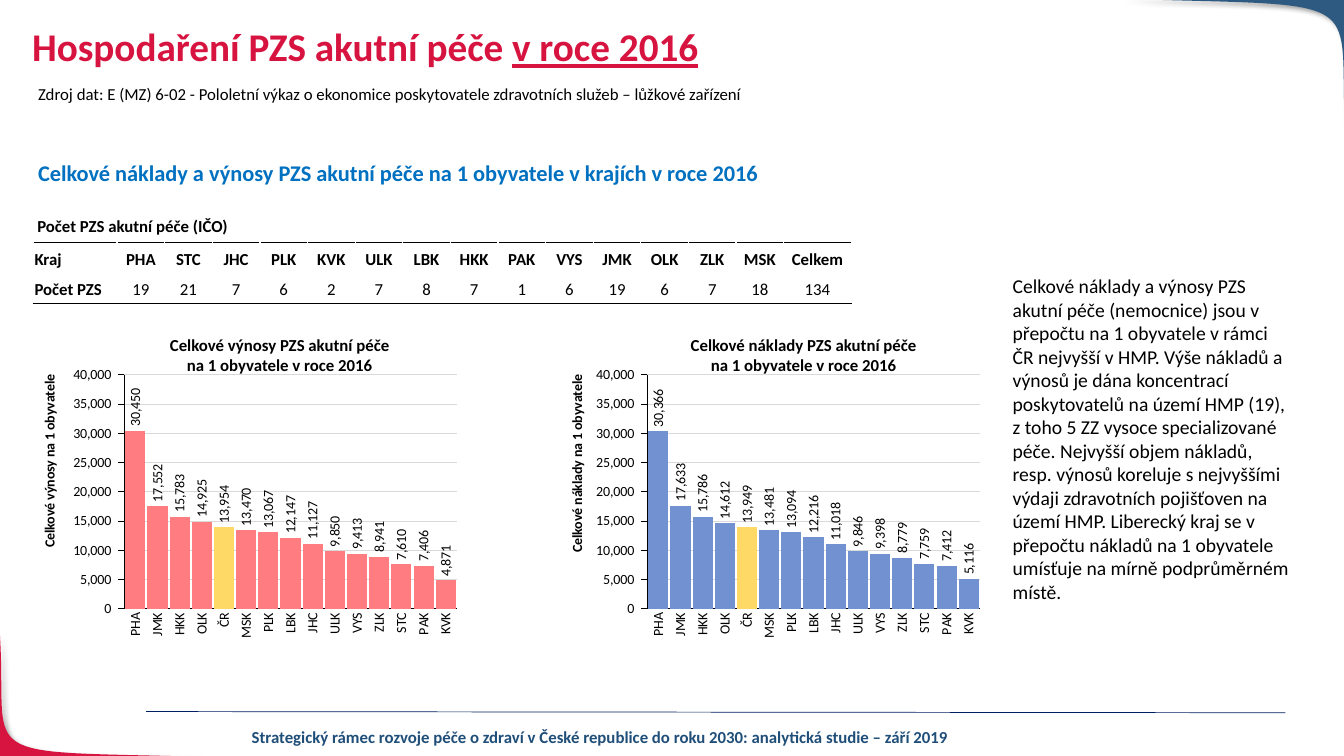
from lxml import etree
from pptx import Presentation
from pptx.chart.data import CategoryChartData
from pptx.dml.color import RGBColor
from pptx.enum.chart import XL_CHART_TYPE, XL_LABEL_POSITION, XL_TICK_MARK
from pptx.enum.shapes import MSO_CONNECTOR
from pptx.enum.text import MSO_ANCHOR, PP_ALIGN
from pptx.oxml import parse_xml
from pptx.oxml.ns import nsdecls, qn
from pptx.util import Cm, Pt

LEFT, CENTER = PP_ALIGN.LEFT, PP_ALIGN.CENTER
TOP, MIDDLE = MSO_ANCHOR.TOP, MSO_ANCHOR.MIDDLE
COLUMNS = XL_CHART_TYPE.COLUMN_CLUSTERED
OUTSIDE_END = XL_LABEL_POSITION.OUTSIDE_END
TICK_NONE, TICK_OUTSIDE = XL_TICK_MARK.NONE, XL_TICK_MARK.OUTSIDE
STRAIGHT = MSO_CONNECTOR.STRAIGHT

RED = RGBColor(0xD7, 0x14, 0x40)
STEEL = RGBColor(0x2E, 0x59, 0x80)
NAVY = RGBColor(0x00, 0x20, 0x60)
FOOTER_BLUE = RGBColor(0x1F, 0x4E, 0x79)
HEADING_BLUE = RGBColor(0x00, 0x70, 0xC0)
BLACK = RGBColor(0x00, 0x00, 0x00)
WHITE = RGBColor(0xFF, 0xFF, 0xFF)
GRID = RGBColor(0xD9, 0xD9, 0xD9)
PINK = RGBColor(0xFF, 0x7C, 0x80)
BLUE = RGBColor(0x71, 0x91, 0xD1)
YELLOW = RGBColor(0xFF, 0xD9, 0x66)
FONT = "Calibri"
NUMBER_FORMAT = r"#,##0_ ;[Red]\-#,##0\ "

presentation = Presentation()
presentation.slide_width = Cm(33.87)
presentation.slide_height = Cm(19.05)
slide = presentation.slides.add_slide(presentation.slide_layouts[6])


def style_font(font, size, color=BLACK, bold=False):
    font.name = FONT
    font.size = Pt(size)
    font.bold = bold
    font.color.rgb = color


def set_layout(parent, index, **values):
    for old_layout in parent.findall(qn("c:layout")):
        parent.remove(old_layout)
    layout = parse_xml(f"<c:layout {nsdecls('c')}><c:manualLayout/></c:layout>")
    for name, value in values.items():
        etree.SubElement(layout[0], qn(f"c:{name}")).set("val", str(value))
    parent.insert(index, layout)


corners = [
    (RED, [(5.41, 19.08), (-0.86, 18.9), (0.2, 19.28), (0, 16)], (-0.03, 19.08)),
    (STEEL, [(28.22, -0.03), (34.8, 0.18), (33.68, -0.25), (33.91, 3.61)], (33.91, -0.03)),
]
for color, curve, tip in corners:
    points = []
    for step in range(41):
        t = step / 40
        weights = ((1 - t) ** 3, 3 * t * (1 - t) ** 2, 3 * t**2 * (1 - t), t**3)
        points.append([Cm(sum(w * point[axis] for w, point in zip(weights, curve)))
                       for axis in (0, 1)])
    points.append([Cm(tip[0]), Cm(tip[1])])
    builder = slide.shapes.build_freeform(*points[0])
    builder.add_line_segments(points[1:], close=True)
    corner = builder.convert_to_shape()
    corner.fill.solid()
    corner.fill.fore_color.rgb = color
    corner.line.fill.background()
    corner.shadow.inherit = False
    corner._element.spPr.find(qn("a:effectLst")).append(parse_xml(
        f'<a:outerShdw {nsdecls("a")} blurRad="50800" dist="38100" dir="2700000">'
        '<a:srgbClr val="000000"><a:alpha val="40000"/></a:srgbClr></a:outerShdw>'))

footer_line = slide.shapes.add_connector(STRAIGHT, Cm(3.68), Cm(17.93), Cm(32.39), Cm(17.96))
footer_line.line.color.rgb = NAVY
footer_line.line.width = Pt(0.5)
etree.SubElement(footer_line._element.spPr, qn("a:effectLst"))

body_text = (
    "Celkové náklady a výnosy PZS akutní péče (nemocnice) jsou v přepočtu na 1 obyvatele "
    "v rámci ČR nejvyšší v HMP. Výše nákladů a výnosů je dána koncentrací poskytovatelů na "
    "území HMP (19), z toho 5 ZZ vysoce specializované péče. Nejvyšší objem nákladů, resp. "
    "výnosů koreluje s nejvyššími výdaji zdravotních pojišťoven na území HMP. Liberecký kraj "
    "se v přepočtu nákladů na 1 obyvatele umísťuje na mírně podprůměrném místě."
)
texts = [
    (4.85, 18.19, 20.55, 0.76, 12, FOOTER_BLUE, True, CENTER, TOP,
     [["Strategický rámec rozvoje péče o zdraví v České republice do roku 2030: "
       "analytická studie – září 2019"]]),
    (0.56, 0.58, 29.21, 1.75, 28, RED, True, LEFT, TOP,
     [["Hospodaření PZS akutní péče ", "v roce 2016"]]),
    (0.71, 1.98, 18.44, 0.76, 12, BLACK, False, LEFT, TOP,
     [["Zdroj dat: E (MZ) 6-02 - Pololetní výkaz o ekonomice poskytovatele zdravotních "
       "služeb – lůžkové zařízení"]]),
    (0.71, 3.89, 19.2, 0.94, 16, HEADING_BLUE, True, LEFT, TOP,
     [["Celkové náklady a výnosy PZS akutní péče na 1 obyvatele v krajích v roce 2016"]]),
    (25.27, 6.32, 7.52, 9.47, 14, BLACK, False, LEFT, MIDDLE, [[body_text]]),
    (0.69, 5.31, 10.87, 0.76, 12, BLACK, True, LEFT, TOP, [["Počet PZS akutní péče (IČO)"]]),
    (2.77, 8.31, 8.56, 1.27, 12, BLACK, True, CENTER, TOP,
     [["Celkové výnosy PZS akutní péče"], ["na 1 obyvatele v roce 2016"]]),
    (15.57, 8.31, 9.37, 1.27, 12, BLACK, True, CENTER, TOP,
     [["Celkové náklady PZS akutní péče"], ["na 1 obyvatele v roce 2016"]]),
]

regions = ["PHA", "JMK", "HKK", "OLK", "ČR", "MSK", "PLK", "LBK", "JHC", "ULK", "VYS",
           "ZLK", "STC", "PAK", "KVK"]
charts = [
    (0.56, "Celkové výnosy na 1 obyvatele", 0.035, PINK,
     [30450, 17552, 15783, 14925, 13954, 13470, 13067, 12147, 11127, 9850, 9413, 8941,
      7610, 7406, 4871]),
    (13.74, "Celkové náklady na 1 obyvatele", 0.045, BLUE,
     [30366, 17633, 15786, 14612, 13949, 13481, 13094, 12216, 11018, 9846, 9398, 8779,
      7759, 7412, 5116]),
]
for left, axis_title, title_x, color, values in charts:
    chart_data = CategoryChartData(number_format=NUMBER_FORMAT)
    chart_data.categories = regions
    chart_data.add_series("Series 1", values)
    chart = slide.shapes.add_chart(
        COLUMNS, Cm(left), Cm(9.12), Cm(11.18), Cm(7.11), chart_data).chart
    chart.has_legend = False
    chart.has_title = False
    style_font(chart.font, 10)

    plot = chart.plots[0]
    plot.gap_width = 10
    plot.vary_by_categories = False
    series = plot.series[0]
    series.format.fill.solid()
    series.format.fill.fore_color.rgb = color
    country_fill = series.points[regions.index("ČR")].format.fill
    country_fill.solid()
    country_fill.fore_color.rgb = YELLOW
    labels = series.data_labels
    labels.show_value = True
    labels.position = OUTSIDE_END
    labels.number_format = NUMBER_FORMAT
    labels.number_format_is_linked = False
    style_font(labels.font, 10)

    for axis in (chart.category_axis, chart.value_axis):
        style_font(axis.tick_labels.font, 10)
        axis.format.line.color.rgb = BLACK
        axis.format.line.width = Pt(0.75)
        axis.minor_tick_mark = TICK_NONE
    chart.category_axis.major_tick_mark = TICK_NONE
    value_axis = chart.value_axis
    value_axis.major_tick_mark = TICK_OUTSIDE
    value_axis.minimum_scale = 0
    value_axis.maximum_scale = 40000
    value_axis.major_unit = 5000
    value_axis.tick_labels.number_format = NUMBER_FORMAT
    value_axis.tick_labels.number_format_is_linked = False
    value_axis.major_gridlines.format.line.color.rgb = GRID
    value_axis.major_gridlines.format.line.width = Pt(0.75)
    title_frame = value_axis.axis_title.text_frame
    title_frame.text = axis_title
    style_font(title_frame.paragraphs[0].font, 10, bold=True)

    chart_space = chart.element
    for body in chart_space.xpath(
            ".//c:catAx/c:txPr/a:bodyPr | .//c:dLbls/c:txPr/a:bodyPr | .//c:valAx/c:title//a:bodyPr"):
        body.set("rot", "-5400000")
        body.set("vert", "horz")
    set_layout(chart_space.xpath(".//c:plotArea")[0], 0, layoutTarget="inner",
               xMode="edge", yMode="edge", x=0.23, y=0.046, w=0.75, h=0.83)
    set_layout(chart_space.xpath(".//c:valAx/c:title")[0], 1,
               xMode="edge", yMode="edge", x=title_x, y=0.035)

for left, top, width, height, size, color, bold, alignment, anchor, lines in texts:
    frame = slide.shapes.add_textbox(Cm(left), Cm(top), Cm(width), Cm(height)).text_frame
    frame.word_wrap = True
    frame.vertical_anchor = anchor
    for number, parts in enumerate(lines):
        paragraph = frame.add_paragraph() if number else frame.paragraphs[0]
        paragraph.alignment = alignment
        style_font(paragraph.font, size, color, bold)
        for part in parts:
            run = paragraph.add_run()
            run.text = part
        if len(parts) > 1:
            paragraph.line_spacing = 0.9
            run.font.underline = True

rows = [
    ["Kraj", "PHA", "STC", "JHC", "PLK", "KVK", "ULK", "LBK", "HKK", "PAK", "VYS", "JMK",
     "OLK", "ZLK", "MSK", "Celkem"],
    ["Počet PZS", "19", "21", "7", "6", "2", "7", "8", "7", "1", "6", "19", "6", "7", "18", "134"],
]
table = slide.shapes.add_table(2, 16, Cm(0.84), Cm(6.12), Cm(20.61), Cm(1.52)).table
table.first_row = False
table.horz_banding = False
for column, width in zip(table.columns, [2.11] + [1.2] * 14 + [1.7]):
    column.width = Cm(width)
for row_index, (height, border) in enumerate([(0.81, "lnT"), (0.71, "lnB")]):
    table.rows[row_index].height = Cm(height)
    for column_index, value in enumerate(rows[row_index]):
        cell = table.cell(row_index, column_index)
        cell.text = value
        cell.vertical_anchor = MIDDLE
        cell.margin_left = cell.margin_right = cell.margin_top = Cm(0.03)
        cell.margin_bottom = 0
        cell.fill.solid()
        cell.fill.fore_color.rgb = WHITE
        paragraph = cell.text_frame.paragraphs[0]
        paragraph.alignment = CENTER if column_index else LEFT
        style_font(paragraph.font, 12, bold=row_index == 0 or column_index == 0)
        cell._tc.tcPr.insert(0, parse_xml(
            f'<a:{border} {nsdecls("a")} w="9525"><a:solidFill><a:srgbClr val="{BLACK}"/>'
            f"</a:solidFill></a:{border}>"))

presentation.save("out.pptx")
